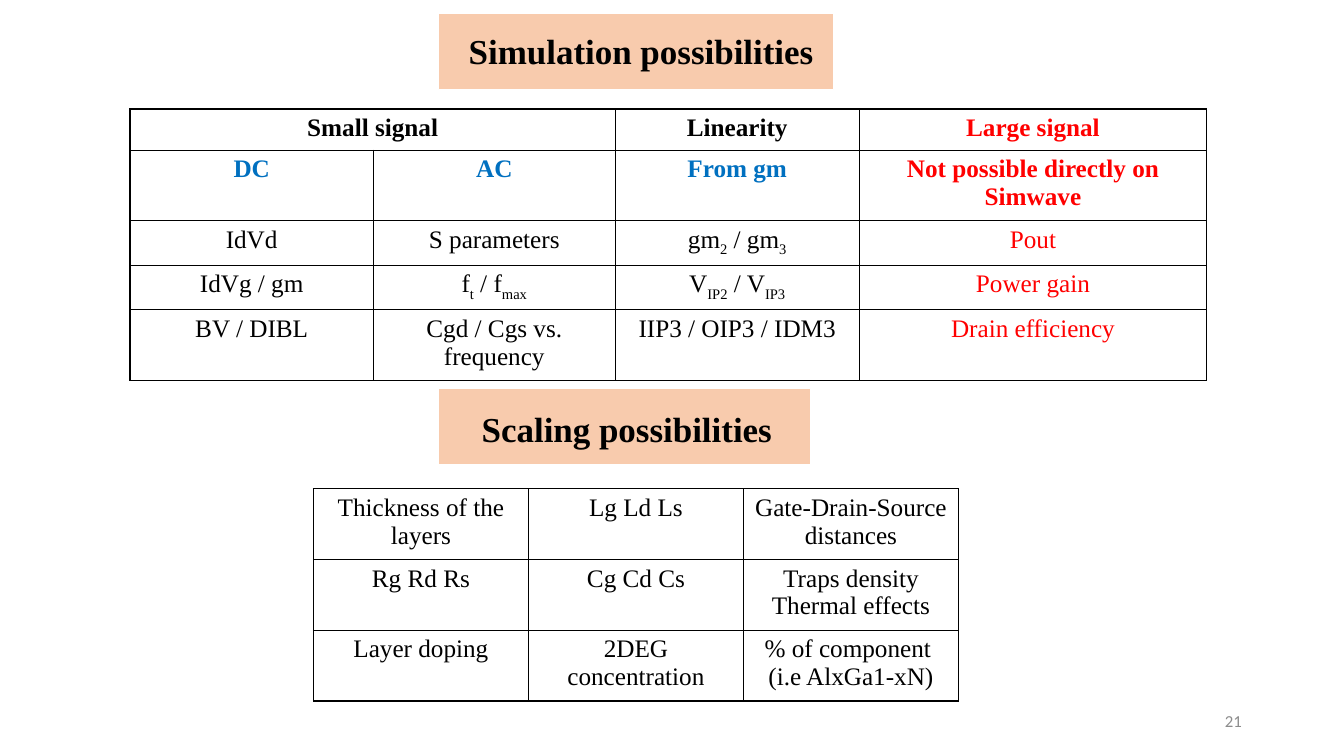
from lxml import etree
from pptx import Presentation
from pptx.dml.color import RGBColor
from pptx.enum.shapes import MSO_SHAPE
from pptx.enum.text import MSO_ANCHOR, MSO_AUTO_SIZE, PP_ALIGN
from pptx.oxml.ns import qn
from pptx.util import Pt

RECT = MSO_SHAPE.RECTANGLE
TOP, MIDDLE = MSO_ANCHOR.TOP, MSO_ANCHOR.MIDDLE
NO_FIT = MSO_AUTO_SIZE.NONE
CENTER, RIGHT = PP_ALIGN.CENTER, PP_ALIGN.RIGHT
SERIF, SANS = "Times New Roman", "Calibri"
BLACK, WHITE, RED, BLUE = "000000", "FFFFFF", "FF0000", "0070C0"
PEACH, GRAY = "F8CBAD", "8C8C8C"


def rgb(value):
    return RGBColor.from_string(value)


def write(tf, text, size, color=BLACK, bold=False, font=SERIF, align=CENTER):
    tf.word_wrap = True
    for i, line in enumerate(text.split("\n")):
        p = tf.paragraphs[0] if i == 0 else tf.add_paragraph()
        p.alignment = align
        for j, part in enumerate(line.split("|")):
            if not part:
                continue
            r = p.add_run()
            r.text = part
            r.font.size = Pt(size)
            r.font.name = font
            r.font.bold = bold
            r.font.color.rgb = rgb(color)
            if j % 2:
                r._r.get_or_add_rPr().set("baseline", "-25000")


prs = Presentation()
prs.slide_width, prs.slide_height = Pt(960), Pt(540)
s = prs.slides.add_slide(prs.slide_layouts[5])

headings = [
    ("Simulation possibilities ", 9.4, 282.2, 324.7, 17.3),
    ("Scaling possibilities", 277.5, 265.7, 314.6, 287.3),
]
for i, (text, band_top, band_width, left, top) in enumerate(headings):
    band = s.shapes.add_shape(RECT, Pt(313.2), Pt(band_top), Pt(band_width), Pt(54.6))
    band.shadow.inherit = False
    band.fill.solid()
    band.fill.fore_color.rgb = rgb(PEACH)
    band.line.color.rgb = rgb(WHITE)
    band.line.width = Pt(1)
    box = (Pt(left), Pt(top), Pt(266.4), Pt(37.6))
    if i == 0:
        sp = s.shapes.title
        sp.left, sp.top, sp.width, sp.height = box
        sp._element.addprevious(band._element)
    else:
        sp = s.shapes.add_textbox(*box)
    tf = sp.text_frame
    tf.auto_size = NO_FIT
    tf.vertical_anchor = TOP
    write(tf, text, 25, bold=True)

simulation = [
    ["Small signal", "", "Linearity", "Large signal", ""],
    ["DC", "AC", "From gm", "Not possible directly on Simwave", ""],
    ["IdVd", "S parameters", "gm|2| / gm|3", "Pout", ""],
    ["IdVg / gm", "f|t| / f|max", "V|IP2| / V|IP3", "Power gain", ""],
    ["BV / DIBL", "Cgd / Cgs vs. frequency", "IIP3 / OIP3 / IDM3", "Drain efficiency", ""],
]
scaling = [
    ["Thickness of the layers", "Lg Ld Ls", "Gate-Drain-Source distances"],
    ["Rg Rd Rs", "Cg Cd Cs", "Traps density\nThermal effects"],
    ["Layer doping", "2DEG concentration", "% of component \n(i.e AlxGa1-xN)"],
]
grids = [
    (simulation, 92.9, 77.8, [173.8, 172.8, 174.2, 248.4, 98.6], [29.5, 50.5, 31.8, 31.8, 50.5]),
    (scaling, 223.9, 349.2, [153.6] * 3, [50.5] * 3),
]
for rows, left, top, widths, heights in grids:
    frame = s.shapes.add_table(
        len(rows), len(widths), Pt(left), Pt(top), Pt(sum(widths)), Pt(sum(heights))
    )
    table = frame.table
    table.first_row = table.horz_banding = False
    for column, width in zip(table.columns, widths):
        column.width = Pt(width)
    for row, height in zip(table.rows, heights):
        row.height = Pt(height)
    if rows is simulation:
        table.cell(0, 0).merge(table.cell(0, 1))
        table.cell(0, 4).merge(table.cell(4, 4))
    for i, row in enumerate(rows):
        for j, text in enumerate(row):
            cell = table.cell(i, j)
            tcPr = cell._tc.get_or_add_tcPr()
            for side in "LRTB":
                ln = etree.SubElement(tcPr, qn(f"a:ln{side}"), w=str(Pt(1)))
                if j == 4 and side != "L":
                    etree.SubElement(ln, qn("a:noFill"))
                else:
                    fill = etree.SubElement(ln, qn("a:solidFill"))
                    etree.SubElement(fill, qn("a:srgbClr"), val=BLACK)
            cell.fill.background()
            header = rows is simulation and i < 2
            color = BLACK
            if j == 3:
                color = RED
            elif header and i == 1:
                color = BLUE
            if text:
                write(cell.text_frame, text, 18, color, header)

sp = s.shapes.add_textbox(Pt(678.2), Pt(500.4), Pt(216), Pt(28.8))
sp.text_frame.vertical_anchor = MIDDLE
write(sp.text_frame, "21", 12, GRAY, font=SANS, align=RIGHT)

prs.save("out.pptx")
